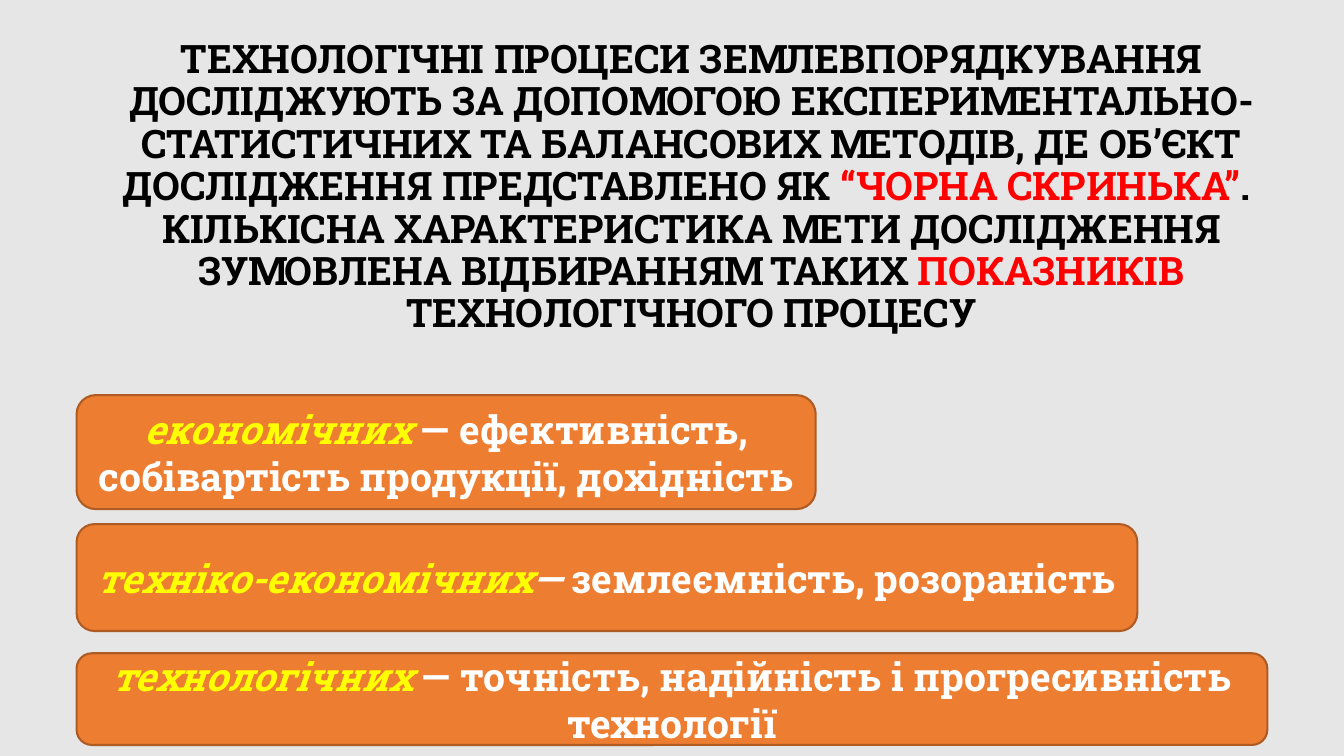
from pptx import Presentation
from pptx.dml.color import RGBColor
from pptx.enum.shapes import MSO_SHAPE as Preset
from pptx.enum.text import MSO_ANCHOR as Anchor, MSO_AUTO_SIZE as AutoSize, PP_ALIGN as Align
from pptx.util import Inches, Pt

BACKDROP = RGBColor(0xE7, 0xE6, 0xE6)
ORANGE = RGBColor(0xED, 0x7D, 0x31)
BROWN = RGBColor(0xAF, 0x5C, 0x24)
BLACK = RGBColor(0x00, 0x00, 0x00)
WHITE = RGBColor(0xFF, 0xFF, 0xFF)
RED = RGBColor(0xFF, 0x00, 0x00)
YELLOW = RGBColor(0xFF, 0xFF, 0x00)

CARD_LEFT, CARD_TOP, CARD_STEP = 5.7, 52.27, 17.07

THESIS = [
    ("ТЕХНОЛОГІЧНІ ПРОЦЕСИ ЗЕМЛЕВПОРЯДКУВАННЯ ДОСЛІДЖУЮТЬ ЗА ДОПОМОГОЮ "
     "ЕКСПЕРИМЕНТАЛЬНО-СТАТИСТИЧНИХ ТА БАЛАНСОВИХ МЕТОДІВ, ДЕ ОБ’ЄКТ "
     "ДОСЛІДЖЕННЯ ПРЕДСТАВЛЕНО ЯК ", BLACK),
    ("“ЧОРНА СКРИНЬКА”", RED),
    (". \nКІЛЬКІСНА ХАРАКТЕРИСТИКА МЕТИ ДОСЛІДЖЕННЯ ЗУМОВЛЕНА ВІДБИРАННЯМ ТАКИХ ", BLACK),
    ("ПОКАЗНИКІВ", RED),
    (" ТЕХНОЛОГІЧНОГО ПРОЦЕСУ", BLACK),
]

INDICATORS = [
    (54.99, 15.07, [("економічних ", YELLOW, True),
                    ("— ефективність, собівартість продукції, дохідність", WHITE)]),
    (78.92, 14.13, [("техніко-економічних", YELLOW, True),
                    ("— ", WHITE, True),
                    ("землеємність, розораність", WHITE)]),
    (88.6, 12.13, [("технологічних", YELLOW, True),
                   (" — точність, надійність і прогресивність технології", WHITE)]),
]


class Slide:
    """Holds the text style and current slide; lengths are percentages of its size."""

    font_name, font_size = "Roboto Slab", Pt(28)

    def __init__(self, deck):
        self.width, self.height = deck.slide_width, deck.slide_height
        self.page = deck.slides.add_slide(deck.slide_layouts[5])
        self.page.background.fill.solid()
        self.page.background.fill.fore_color.rgb = BACKDROP

    def box(self, left, top, width, height):
        """Turn percentages into slide lengths."""
        return (int(self.width * left / 100), int(self.height * top / 100),
                int(self.width * width / 100), int(self.height * height / 100))

    def add_text(self, frame, pieces):
        """Add centred runs of text, colour and optional italics."""
        frame.word_wrap = True
        frame.auto_size = AutoSize.NONE
        frame.vertical_anchor = Anchor.MIDDLE
        paragraph = frame.paragraphs[0]
        paragraph.alignment = Align.CENTER
        for text, color, *italic in pieces:
            for index, line in enumerate(text.split("\n")):
                if index:
                    paragraph.add_line_break()
                run = paragraph.add_run()
                run.text = line
                run.font.name, run.font.size = self.font_name, self.font_size
                run.font.bold, run.font.italic = True, bool(italic)
                run.font.color.rgb = color
        return paragraph

    def title(self, area, pieces):
        """Place and fill the title."""
        heading = self.page.shapes.title
        heading.left, heading.top, heading.width, heading.height = self.box(*area)
        self.add_text(heading.text_frame, pieces).line_spacing = 0.9

    def card(self, area, pieces):
        """Draw a rounded card with text."""
        card = self.page.shapes.add_shape(Preset.ROUNDED_RECTANGLE, *self.box(*area))
        card.shadow.inherit = False
        card.fill.solid()
        card.fill.fore_color.rgb = ORANGE
        card.line.color.rgb = BROWN
        card.line.width = Pt(1.5)
        self.add_text(card.text_frame, pieces)


def main():
    """Build and save the slide."""
    deck = Presentation()
    deck.slide_width, deck.slide_height = Inches(13.33), Inches(7.5)
    slide = Slide(deck)
    slide.title((3.83, 3.2, 95.2, 43.33), THESIS)
    for row, (width, height, pieces) in enumerate(INDICATORS):
        slide.card((CARD_LEFT, CARD_TOP + row * CARD_STEP, width, height), pieces)
    deck.save("out.pptx")


if __name__ == "__main__":
    main()
